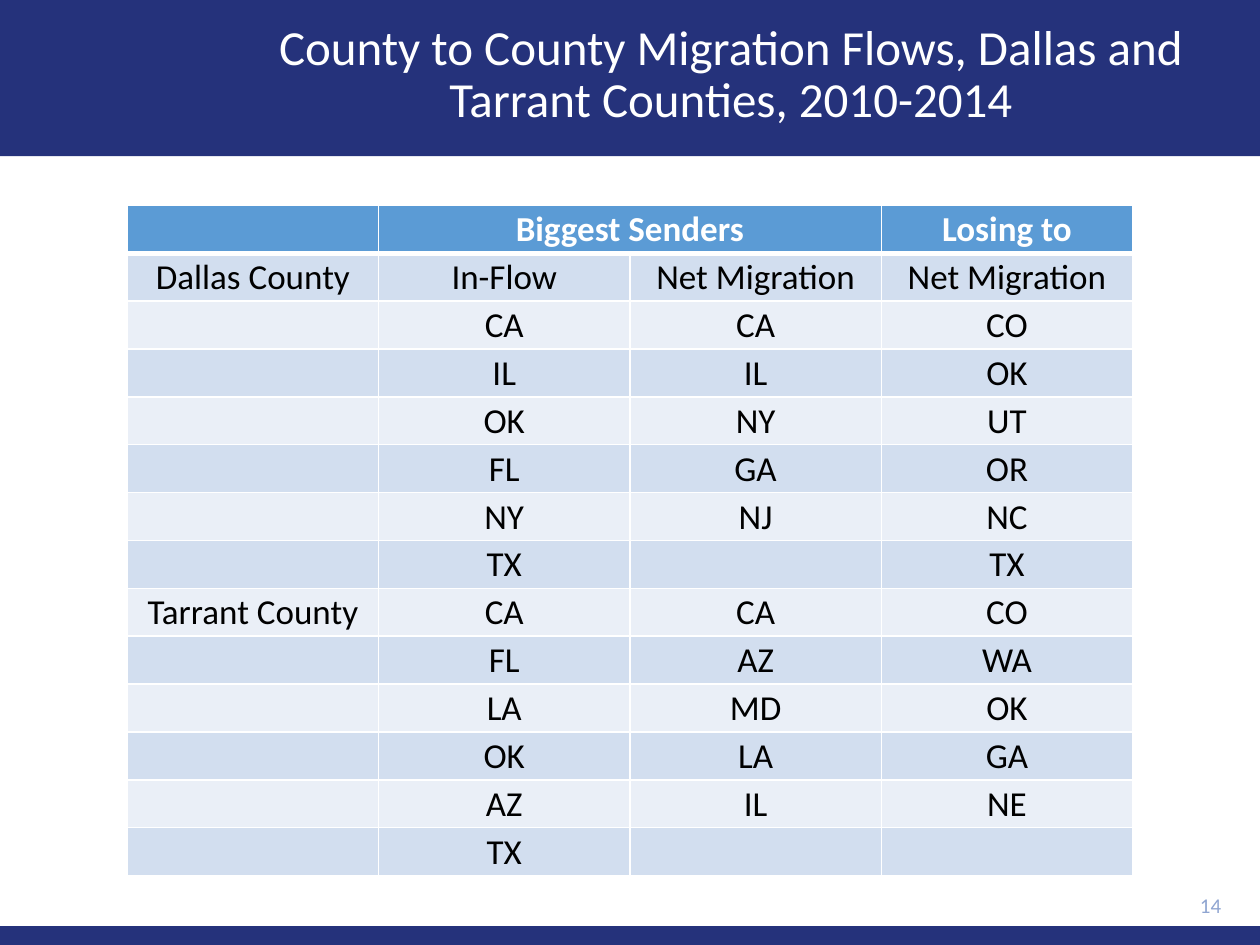
from dataclasses import dataclass
from pptx import Presentation
from pptx.dml.color import RGBColor
from pptx.enum.shapes import MSO_SHAPE
from pptx.enum.text import MSO_ANCHOR, PP_ALIGN
from pptx.oxml import parse_xml
from pptx.oxml.ns import nsdecls
from pptx.util import Inches, Pt


@dataclass(frozen=True)
class Theme:
    face: str = "Calibri"
    navy: str = "25327B"
    head: str = "5B9BD5"
    bands: tuple = ("D2DEEF", "EAEFF7")
    white: str = "FFFFFF"
    black: str = "000000"
    pale: str = "8FA5D1"
    title: int = 28
    body: int = 20
    small: int = 12
    thin: int = 1
    thick: int = 3


THEME = Theme()
WIDE, HIGH = Inches(10), Inches(7.5)
HEADS = ("", "Biggest Senders", "", "Losing to")
ROWS = (
    ("Dallas County", "In-Flow", "Net Migration", "Net Migration"),
    ("", "CA", "CA", "CO"),
    ("", "IL", "IL", "OK"),
    ("", "OK", "NY", "UT"),
    ("", "FL", "GA", "OR"),
    ("", "NY", "NJ", "NC"),
    ("", "TX", "", "TX"),
    ("Tarrant County", "CA", "CA", "CO"),
    ("", "FL", "AZ", "WA"),
    ("", "LA", "MD", "OK"),
    ("", "OK", "LA", "GA"),
    ("", "AZ", "IL", "NE"),
    ("", "TX", "", ""),
)


def style(para, size, color, align, bold=False):
    para.alignment = align
    font = para.font
    font.name, font.size, font.bold = THEME.face, Pt(size), bold
    font.color.rgb = RGBColor.from_string(color)


def paint(fill, color):
    fill.solid()
    fill.fore_color.rgb = RGBColor.from_string(color)


def add_bar(slide, top, tall):
    bar = slide.shapes.add_shape(MSO_SHAPE.RECTANGLE, 0, top, WIDE, tall)
    bar.shadow.inherit = False
    paint(bar.fill, THEME.navy)
    bar.line.fill.background()
    slide.shapes.title.element.addprevious(bar.element)


def set_title(slide, text):
    title = slide.shapes.title
    title.left, title.top = int(WIDE * 0.17), Inches(0.1)
    title.width, title.height = int(WIDE * 0.82), Inches(1)
    frame = title.text_frame
    frame.text = text
    frame.word_wrap = True
    frame.vertical_anchor = MSO_ANCHOR.MIDDLE
    para = frame.paragraphs[0]
    para.line_spacing = 0.9
    style(para, THEME.title, THEME.white, PP_ALIGN.CENTER)


def edge(cell, side, width):
    cell._tc.get_or_add_tcPr().append(parse_xml(
        f'<a:ln{side} {nsdecls("a")} w="{Pt(width)}"><a:solidFill>'
        f'<a:srgbClr val="{THEME.white}"/></a:solidFill></a:ln{side}>'))


def set_cell(cell, text, row):
    head = row == 0
    cell.margin_left = cell.margin_right = cell.margin_top = Inches(0.01)
    cell.margin_bottom = 0
    cell.vertical_anchor = MSO_ANCHOR.MIDDLE
    heavy = {"T": row == 1, "B": head}
    for side in "LRTB":
        edge(cell, side, THEME.thick if heavy.get(side) else THEME.thin)
    paint(cell.fill, THEME.head if head else THEME.bands[(row - 1) % 2])
    cell.text = text
    color = THEME.white if head else THEME.black
    style(cell.text_frame.paragraphs[0], THEME.body, color,
          PP_ALIGN.CENTER, head)


def add_grid(slide):
    data = (HEADS, *ROWS)
    grid = slide.shapes.add_table(
        len(data), len(HEADS), Inches(1.01), Inches(1.63),
        Inches(7.98), Inches(0.38) * len(data)).table
    for row, line in enumerate(data):
        for col, text in enumerate(line):
            set_cell(grid.cell(row, col), text, row)
    grid.cell(0, 1).merge(grid.cell(0, 2))


def add_page(slide, text):
    box = slide.shapes.add_textbox(
        int(WIDE * 0.89), Inches(7.01), Inches(0.89), Inches(0.34))
    frame = box.text_frame
    frame.word_wrap = True
    frame.vertical_anchor = MSO_ANCHOR.MIDDLE
    frame.text = text
    style(frame.paragraphs[0], THEME.small, THEME.pale, PP_ALIGN.RIGHT)


def main():
    deck = Presentation()
    deck.slide_width, deck.slide_height = WIDE, HIGH
    slide = deck.slides.add_slide(deck.slide_layouts[5])
    paint(slide.background.fill, THEME.white)
    foot = int(HIGH * 0.02)
    add_bar(slide, 0, Inches(1.24))
    add_bar(slide, HIGH - foot, foot)
    set_title(slide, "County to County Migration Flows, Dallas and "
                     "Tarrant Counties, 2010-2014")
    add_grid(slide)
    add_page(slide, "14")
    deck.save("out.pptx")


if __name__ == "__main__":
    main()
